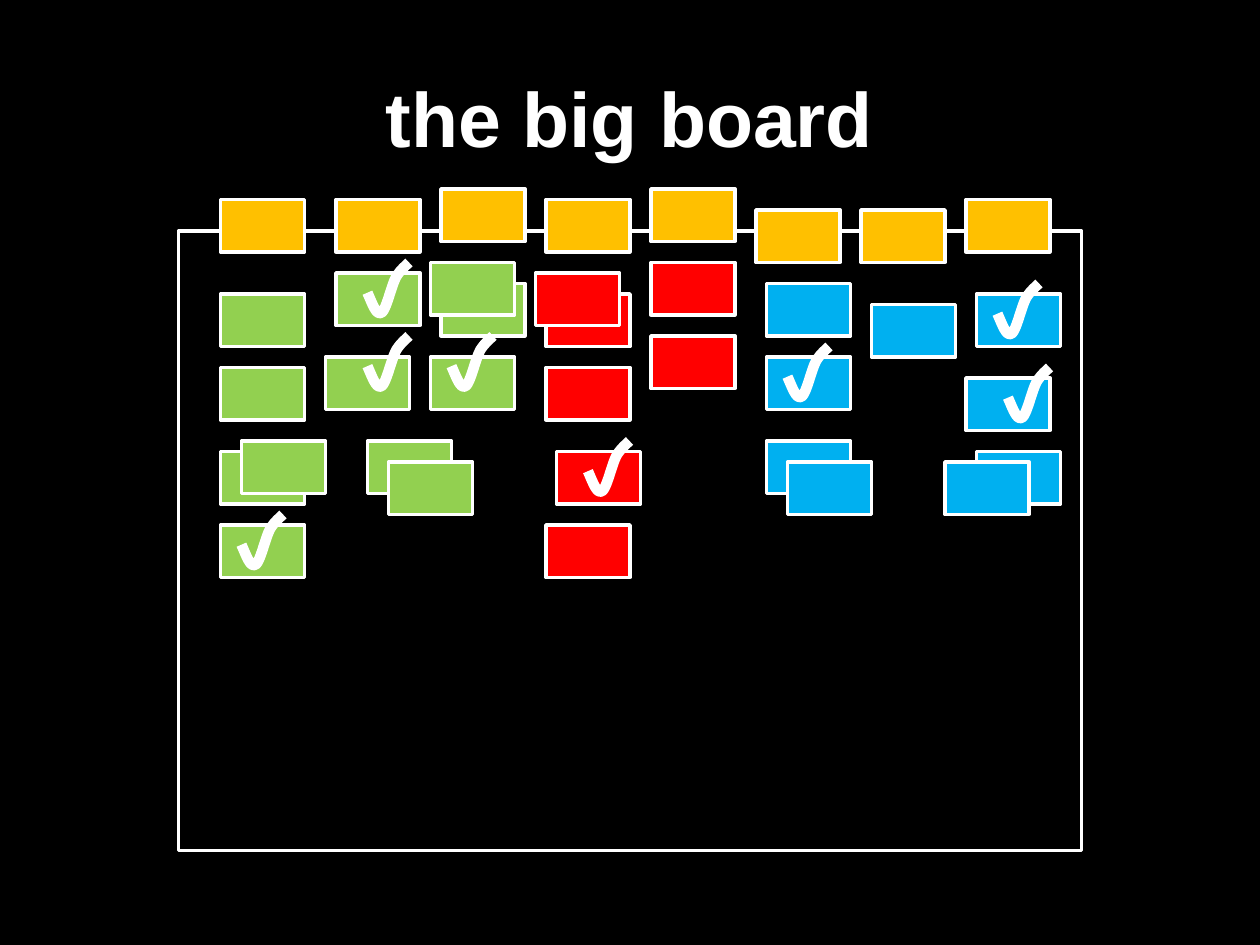
from typing import NamedTuple

from lxml import etree
from pptx import Presentation
from pptx.dml.color import RGBColor
from pptx.enum import shapes, text
from pptx.oxml import ns
from pptx.util import Inches, Pt

WHITE, BLACK = "FFFFFF", "000000"
AMBER, BLUE, RED, GREEN = "FFC000", "00B0F0", "FF0000", "92D050"
CARD_SIZE = (8, 5)  # in grid units
FRAME = (17, 22, 86, 59)


class Cards(NamedTuple):
    """Cards of one colour, placed by left and top in grid units."""
    color: str
    places: list[tuple[int, int]]


HEADINGS = Cards(AMBER, [(21, 19), (32, 19), (42, 18), (52, 19),
                         (62, 18), (72, 20), (82, 20), (92, 19)])
BACK_CARDS = [
    Cards(BLUE, [(83, 29), (73, 27), (73, 34), (93, 28), (92, 36), (93, 43)]),
    Cards(RED, [(52, 28), (62, 25), (52, 35), (53, 43), (62, 32)]),
    Cards(GREEN, [(21, 28), (32, 26), (21, 35), (21, 43), (31, 34),
                  (42, 27), (41, 34), (35, 42), (21, 50)]),
]
FRONT_CARDS = [
    Cards(GREEN, [(37, 44), (23, 42), (41, 25)]),
    Cards(RED, [(52, 50), (51, 26)]),
    Cards(BLUE, [(90, 44), (73, 42), (75, 44)]),
]
TICKS = [(23, 49), (43, 32), (56, 42), (75, 33),
         (95, 27), (96, 35), (35, 25), (35, 32)]

# Tick curve in hundredths of an inch: start, then control, control, end
TICK_START = (0, 24)
TICK_CURVES = [
    [(4, 33), (7, 42), (11, 40)],
    [(15, 38), (19, 18), (23, 11)],
    [(27, 5), (30, 3), (33, 0)],
]


def grid(units: int) -> Inches:
    """The board is laid out on a grid of twelve units to the inch."""
    return Inches(units / 12)


def paint(color: str) -> RGBColor:
    return RGBColor.from_string(color)


def set_outline(shape, width: float) -> None:
    shape.shadow.inherit = False
    shape.line.color.rgb = paint(WHITE)
    shape.line.width = Pt(width)


def add_box(page, left: int, top: int, width: int, height: int, color: str = "") -> None:
    box = page.shapes.add_shape(shapes.MSO_SHAPE.RECTANGLE,
                                *map(grid, (left, top, width, height)))
    if color:
        box.fill.solid()
        box.fill.fore_color.rgb = paint(color)
    else:
        box.fill.background()
    set_outline(box, 2)


def add_cards(page, cards: Cards) -> None:
    for left, top in cards.places:
        add_box(page, left, top, *CARD_SIZE, cards.color)


def add_tick(page, left: int, top: int) -> None:
    builder = page.shapes.build_freeform(*TICK_START, scale=Inches(0.01))
    builder.add_line_segments([curve[-1] for curve in TICK_CURVES], close=False)
    tick = builder.convert_to_shape(grid(left), grid(top))
    # Bend each straight segment into a cubic curve
    segments = list(tick._element.iter(ns.qn("a:lnTo")))
    for segment, curve in zip(segments, TICK_CURVES):
        segment.tag = ns.qn("a:cubicBezTo")
        for point in list(segment):
            segment.remove(point)
        for x, y in curve:
            etree.SubElement(segment, ns.qn("a:pt"), x=str(x), y=str(y))
    tick.fill.background()
    set_outline(tick, 6)


def add_title(page, wording: str) -> None:
    box = page.shapes.add_textbox(Inches(0.5), Inches(0.3), Inches(9), Inches(1.25))
    frame = box.text_frame
    frame.word_wrap = True
    frame.vertical_anchor = text.MSO_ANCHOR.MIDDLE
    para = frame.paragraphs[0]
    para.alignment = text.PP_ALIGN.CENTER
    span = para.add_run()
    span.text = wording
    for name, value in {"name": "Arial", "size": Pt(44), "bold": True}.items():
        setattr(span.font, name, value)
    span.font.color.rgb = paint(WHITE)


def main() -> None:
    deck = Presentation()
    deck.slide_width, deck.slide_height = Inches(10), Inches(7.5)
    page = deck.slides.add_slide(deck.slide_layouts[6])
    page.background.fill.solid()
    page.background.fill.fore_color.rgb = paint(BLACK)

    # Title and board
    add_title(page, "the big board")
    add_box(page, *FRAME)

    # Column headings, then the cards below them
    for cards in [HEADINGS, *BACK_CARDS]:
        add_cards(page, cards)

    # Ticks on finished cards
    for left, top in TICKS:
        add_tick(page, left, top)

    # Cards stacked on top of others
    for cards in FRONT_CARDS:
        add_cards(page, cards)

    deck.save("out.pptx")


if __name__ == "__main__":
    main()
